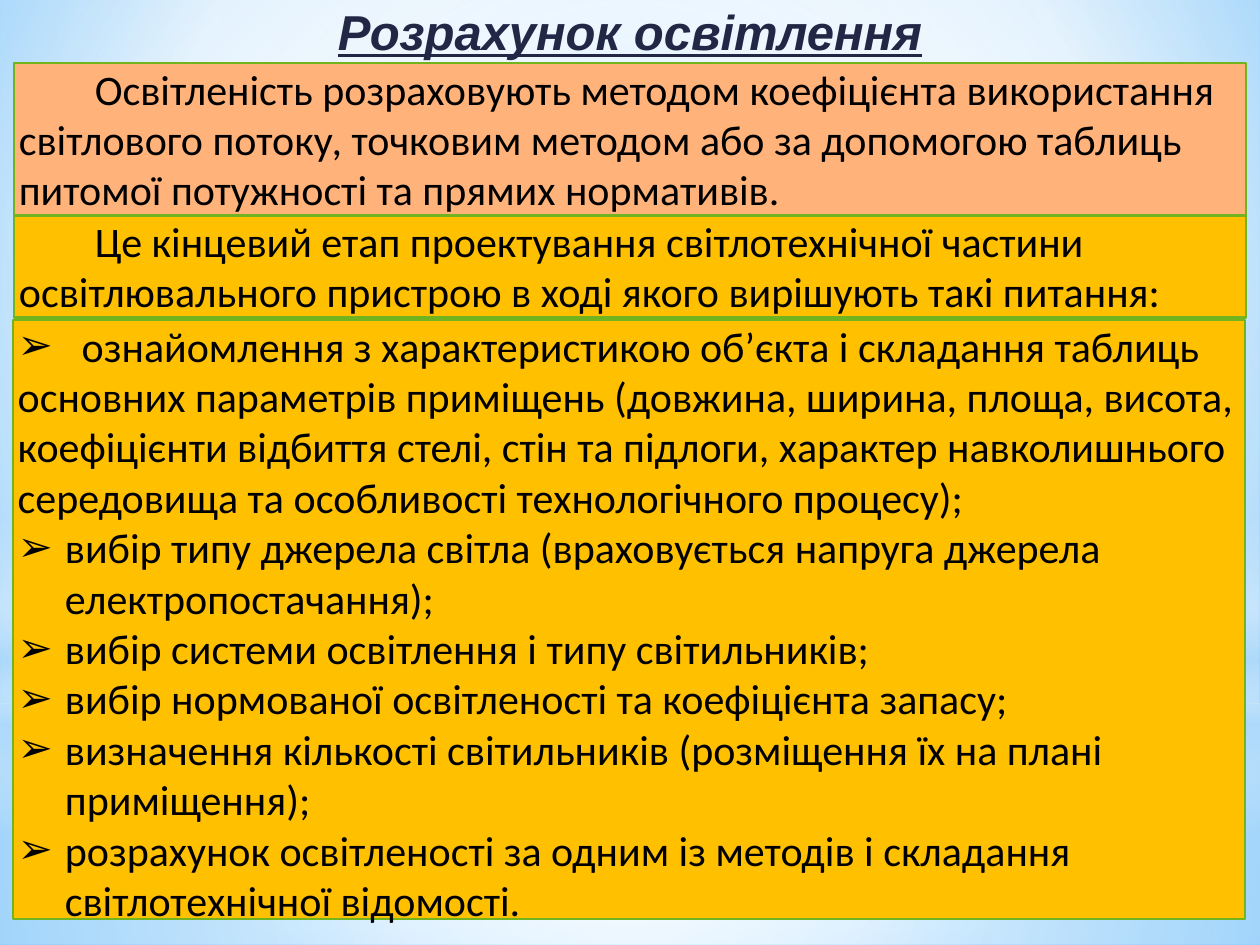
from dataclasses import dataclass

from lxml.etree import SubElement
from pptx import Presentation
from pptx.dml.color import RGBColor
from pptx.enum.shapes import MSO_SHAPE as Preset
from pptx.enum.text import MSO_ANCHOR as Anchor, MSO_AUTO_SIZE as AutoSize, PP_ALIGN as Align
from pptx.oxml.ns import qn
from pptx.util import Pt


@dataclass(frozen=True)
class Theme:
    """Colours, fonts and sizes of the slide."""
    title_ink: str = "212745"
    ink: str = "000000"
    peach: str = "FFB37A"
    amber: str = "FFC000"
    border: str = "72B41D"
    white: str = "FFFFFF"
    haze: str = "B4DCFA"
    sky: str = "9ED5FF"
    deep_sky: str = "5BB9FF"
    title_font: str = "Arial"
    text_font: str = "Calibri"
    title_size: float = 28
    text_size: float = 24
    border_width: float = 1.25


THEME = Theme()
CENTRE = (50, 50, 50, 50)
TITLE = "Розрахунок освітлення"
METHODS = ("Освітленість розраховують методом коефіцієнта використання світлового потоку, "
           "точковим методом або за допомогою таблиць питомої потужності та прямих нормативів.")
FINAL_STAGE = ("Це кінцевий етап проектування світлотехнічної частини освітлювального пристрою "
               "в ході якого вирішують такі питання:")
SURVEY = ("\tознайомлення з характеристикою об’єкта і складання таблиць основних параметрів "
          "приміщень (довжина, ширина, площа, висота, коефіцієнти відбиття стелі, стін та "
          "підлоги, характер навколишнього середовища та особливості технологічного процесу);")
CHOICES = [
    "вибір типу джерела світла (враховується напруга джерела електропостачання);",
    "вибір системи освітлення і типу світильників;",
    "вибір нормованої освітленості та коефіцієнта запасу;",
    "визначення кількості світильників (розміщення їх на плані приміщення);",
    "розрахунок освітленості за одним із методів і складання світлотехнічної відомості.",
]


def write(paragraph, text, font=THEME.text_font, size=THEME.text_size, color=THEME.ink,
          bold=False, italic=False, underline=False, align=Align.LEFT, spacing=1.0,
          margin=0, indent=0, bullet=None, tab=None):
    """Fill a paragraph with formatted text."""
    paragraph.alignment = align
    paragraph.line_spacing = spacing
    paragraph.space_before = paragraph.space_after = Pt(0)
    run = paragraph.add_run()
    run.text = text
    run.font.name, run.font.size = font, Pt(size)
    run.font.bold, run.font.italic, run.font.underline = bold, italic, underline
    run.font.color.rgb = RGBColor.from_string(color)
    properties = paragraph._p.get_or_add_pPr()
    properties.set("marL", str(Pt(margin)))
    properties.set("indent", str(Pt(indent)))
    if bullet:
        SubElement(properties, qn("a:buFont"), typeface=THEME.title_font)
        SubElement(properties, qn("a:buChar"), char=bullet)
    if tab:
        stops = SubElement(properties, qn("a:tabLst"))
        SubElement(stops, qn("a:tab"), pos=str(Pt(tab)), algn="l")


def place(shape, box):
    """Move a shape to a box given in points."""
    shape.left, shape.top, shape.width, shape.height = map(Pt, box)


def prepare_frame(shape, side=0, auto_size=AutoSize.SHAPE_TO_FIT_TEXT, anchor=Anchor.TOP):
    """Set the text margins and fitting of a shape and return its frame."""
    frame = shape.text_frame
    frame.word_wrap = True
    frame.auto_size = auto_size
    frame.vertical_anchor = anchor
    frame.margin_left = frame.margin_right = Pt(side)
    frame.margin_top = frame.margin_bottom = Pt(0)
    return frame


def paint_gradient(fill, element, stops, focus=None):
    """Paint a circular gradient around the focus, or a vertical one without it."""
    fill.solid()
    fill.fore_color.rgb = RGBColor.from_string(THEME.white)
    solid = next(element.iter(qn("a:solidFill")))
    gradient = SubElement(solid.getparent(), qn("a:gradFill"), rotWithShape="1")
    solid.getparent().replace(solid, gradient)
    stop_list = SubElement(gradient, qn("a:gsLst"))
    for position, color, opacity in stops:
        stop = SubElement(stop_list, qn("a:gs"), pos=str(position * 1000))
        tint = SubElement(stop, qn("a:srgbClr"), val=color)
        if opacity < 100:
            SubElement(tint, qn("a:alpha"), val=str(opacity * 1000))
    if focus:
        path = SubElement(gradient, qn("a:path"), path="circle")
        edges = {side: str(inset * 1000) for side, inset in zip("ltrb", focus)}
        SubElement(path, qn("a:fillToRect"), **edges)
    else:
        SubElement(gradient, qn("a:lin"), ang="5400000", scaled="0")


def add_sky(slide, box):
    """Lay the background and its hazy layers behind the text."""
    left, top, width, height = box
    white, haze = THEME.white, THEME.haze
    paint_gradient(slide.background.fill, slide.element,
                   [(0, THEME.sky, 100), (60, white, 100), (100, THEME.deep_sky, 100)],
                   (20, 10, 20, 60))
    horizon = 401.8
    layers = [
        (Preset.RECTANGLE, horizon, height - horizon,
         [(0, white, 91), (37, white, 76), (100, haze, 79)], CENTRE),
        (Preset.RECTANGLE, 0, horizon,
         [(0, white, 89), (48, white, 62), (100, haze, 79)], CENTRE),
        (Preset.RECTANGLE, 296.6, 180,
         [(0, white, 0), (29, white, 30), (45, haze, 40), (55, white, 26),
          (65, haze, 60), (100, white, 0)], None),
        (Preset.OVAL, 126, horizon, [(0, white, 100), (56, white, 0)], CENTRE),
    ]
    for preset, offset, depth, stops, focus in layers:
        layer = slide.shapes.add_shape(
            preset, Pt(left), Pt(top + offset), Pt(width), Pt(depth))
        layer.shadow.inherit = False
        paint_gradient(layer.fill, layer.element, stops, focus)
        layer.line.fill.background()
        slide.shapes.title.element.addprevious(layer.element)


def fill_title(title, box):
    """Place and write the heading."""
    place(title, box)
    frame = prepare_frame(title, auto_size=AutoSize.NONE)
    write(frame.paragraphs[0], TITLE, font=THEME.title_font, size=THEME.title_size,
          color=THEME.title_ink, bold=True, italic=True, underline=True,
          align=Align.CENTER, spacing=0.85)


def style_panel(panel, box, color):
    """Place a bordered panel and return its text frame."""
    place(panel, box)
    panel.fill.solid()
    panel.fill.fore_color.rgb = RGBColor.from_string(color)
    panel.line.color.rgb = RGBColor.from_string(THEME.border)
    panel.line.width = Pt(THEME.border_width)
    return prepare_frame(panel, side=2.9)


def add_statement(slide, box, text, color):
    """Add a panel with one indented paragraph."""
    panel = slide.shapes.add_shape(Preset.RECTANGLE, *map(Pt, box))
    panel.shadow.inherit = False
    write(style_panel(panel, box, color).paragraphs[0], text, indent=43.4)


def fill_questions(body, box):
    """Place and write the list of questions."""
    frame = style_panel(body, box, THEME.amber)
    write(frame.paragraphs[0], SURVEY, bullet="➢", tab=36.6)
    for choice in CHOICES:
        write(frame.add_paragraph(), choice, margin=27, indent=-27, bullet="➢")


def main():
    """Build and save the slide."""
    deck = Presentation()
    deck.slide_width, deck.slide_height = Pt(720), Pt(540)
    slide = deck.slides.add_slide(deck.slide_layouts[1])
    add_sky(slide, (0, 0, 720, 540))
    fill_title(slide.shapes.title, (8.6, 5.8, 702.8, 28.8))
    add_statement(slide, (7.9, 36, 704.2, 87.1), METHODS, THEME.peach)
    add_statement(slide, (7.9, 123.1, 704.2, 58.3), FINAL_STAGE, THEME.amber)
    fill_questions(slide.placeholders[1], (7.2, 182.9, 704.2, 349.2))
    deck.save("out.pptx")


if __name__ == "__main__":
    main()
